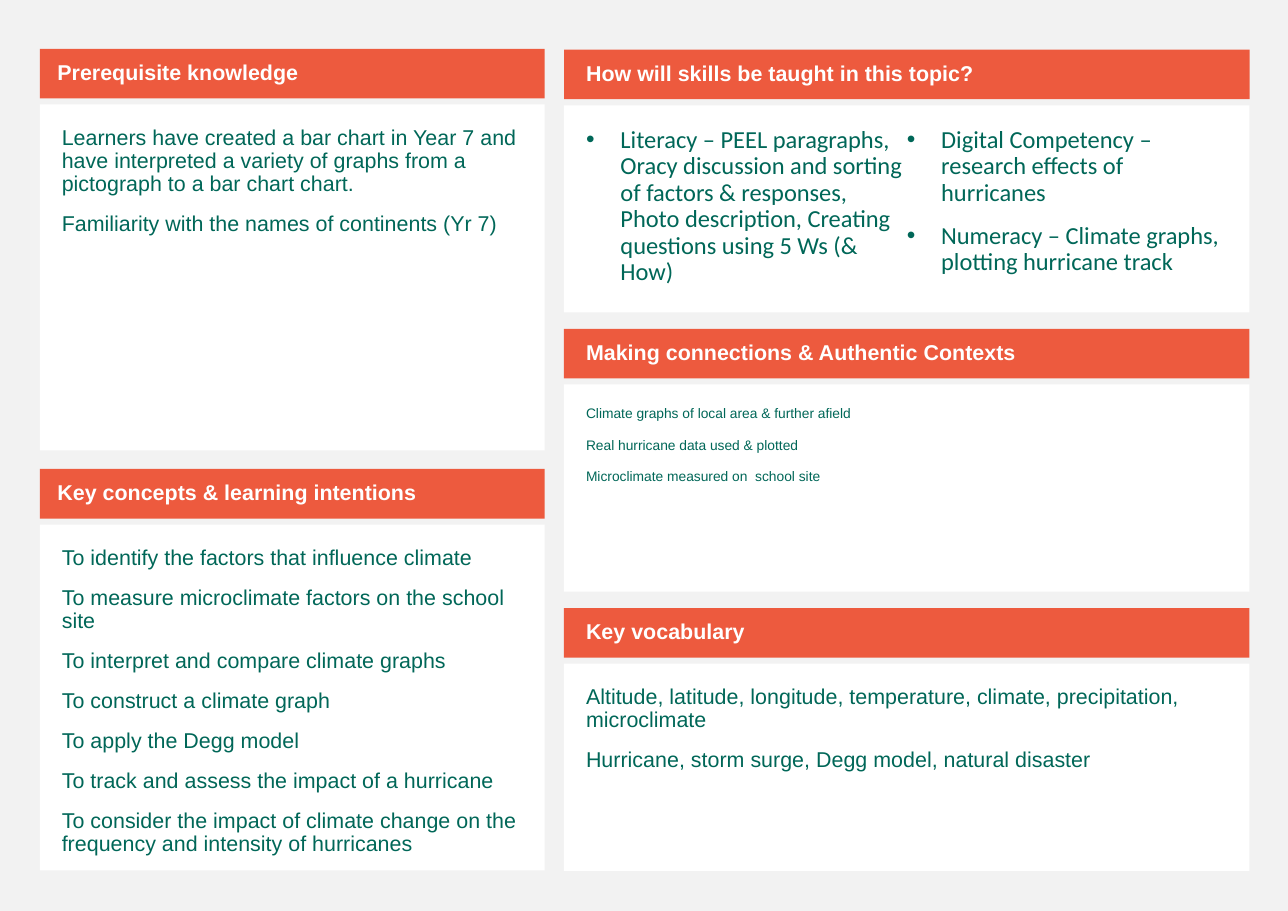
import pptx
import pptx.dml.color
import pptx.enum.shapes
import pptx.enum.text
import pptx.oxml
import pptx.oxml.ns
import pptx.util

Pt = pptx.util.Pt
ORANGE, GREEN, WHITE, GREY = "ED5A3E", "006758", "FFFFFF", "F2F2F2"
HEADING_H, BODY_OFFSET = 32.4, 36.4

# left, top of first panel, step between panels, width, body height, heading inset
LEFT_COLUMN = (26, 31.9, 274.6, 330, 226, 11.5)
RIGHT_COLUMN = (368.6, 32.4, 182.5, 448, 135.4, 14.4)

# heading, paragraphs, format of the paragraphs
LEFT_PANELS = [
    ("Prerequisite knowledge", [
        "Learners have created a bar chart in Year 7 and have interpreted a variety "
        "of graphs from a pictograph to a bar chart chart.",
        "Familiarity with the names of continents (Yr 7)",
    ], {}),
    ("Key concepts & learning intentions", [
        "To identify the factors that influence climate",
        "To measure microclimate factors on the school site",
        "To interpret and compare climate graphs",
        "To construct a climate graph",
        "To apply the Degg model",
        "To track and assess the impact of a hurricane",
        "To consider the impact of climate change on the frequency and intensity "
        "of hurricanes",
    ], {}),
]
RIGHT_PANELS = [
    ("How will skills be taught in this topic?", [
        "Literacy – PEEL paragraphs, Oracy discussion and sorting of factors & "
        "responses, Photo description, Creating questions using 5 Ws (& How)",
        "Digital Competency – research effects of hurricanes",
        "Numeracy – Climate graphs, plotting hurricane track",
    ], {"size": 16, "font": "Calibri", "bullet": "•", "columns": 2}),
    ("Making connections & Authentic Contexts", [
        "Climate graphs of local area & further afield",
        "Real hurricane data used & plotted",
        "Microclimate measured on  school site",
    ], {"size": 9}),
    ("Key vocabulary", [
        "Altitude, latitude, longitude, temperature, climate, precipitation, "
        "microclimate",
        "Hurricane, storm surge, Degg model, natural disaster",
    ], {}),
]


def rgb(color):
    return pptx.dml.color.RGBColor.from_string(color)


def set_bullet(p, bullet):
    """Give the paragraph a hanging bullet, or clear the inherited one."""
    pPr = p._p.get_or_add_pPr()
    indent = Pt(22.5) if bullet else 0
    pPr.set("marL", str(indent))
    pPr.set("indent", str(-indent))
    ns = pptx.oxml.ns.nsdecls("a")
    tags = [f'<a:buFont {ns} typeface="Arial"/>', f'<a:buChar {ns} char="{bullet}"/>']
    for tag in tags if bullet else [f"<a:buNone {ns}/>"]:
        pPr.append(pptx.oxml.parse_xml(tag))


def add_text(p, text, size=14, font="Arial", color=GREEN, bold=False, bullet=None):
    p.alignment = pptx.enum.text.PP_ALIGN.LEFT
    p.line_spacing = 0.9
    p.space_before, p.space_after = Pt(11), Pt(0)
    set_bullet(p, bullet)
    r = p.add_run()
    r.text = text
    r.font.size, r.font.name, r.font.bold = Pt(size), font, bold
    r.font.color.rgb = rgb(color)


def add_block(s, holders, box, fill, insets, anchor, texts, columns=1, **fmt):
    """Fill the next free placeholder, or a new rectangle when none is left."""
    sp = next(holders, None)
    if sp is None:
        sp = s.shapes.add_shape(pptx.enum.shapes.MSO_SHAPE.RECTANGLE, 0, 0, 0, 0)
    sp.left, sp.top, sp.width, sp.height = [Pt(v) for v in box]
    sp.fill.solid()
    sp.fill.fore_color.rgb = rgb(fill)
    sp.line.fill.background()
    sp.shadow.inherit = False
    tf = sp.text_frame
    tf.word_wrap = True
    tf.auto_size = pptx.enum.text.MSO_AUTO_SIZE.NONE
    tf.vertical_anchor = anchor
    tf.margin_left, tf.margin_top, tf.margin_right, tf.margin_bottom = [
        Pt(v) for v in insets]
    if columns > 1:
        tf._txBody.bodyPr.set("numCol", str(columns))
    for i, text in enumerate(texts):
        add_text(tf.add_paragraph() if i else tf.paragraphs[0], text, **fmt)


def add_column(s, holders, column, panels):
    left, first_top, step, width, body_h, inset = column
    anchors = pptx.enum.text.MSO_ANCHOR
    for i, (heading, texts, fmt) in enumerate(panels):
        top = first_top + i * step
        add_block(s, holders, (left, top, width, HEADING_H), ORANGE,
                  (inset, 3.6, 7.2, 3.6), anchors.MIDDLE, [heading],
                  color=WHITE, bold=True)
        add_block(s, holders, (left, top + BODY_OFFSET, width, body_h), WHITE,
                  (14.4,) * 4, anchors.TOP, texts, **fmt)


def main():
    prs = pptx.Presentation()
    prs.slide_width, prs.slide_height = Pt(841.7), Pt(595.4)
    s = prs.slides.add_slide(prs.slide_layouts.get_by_name("Comparison"))
    s.background.fill.solid()
    s.background.fill.fore_color.rgb = rgb(GREY)
    holders = iter(list(s.placeholders))
    add_column(s, holders, LEFT_COLUMN, LEFT_PANELS)
    add_column(s, holders, RIGHT_COLUMN, RIGHT_PANELS)
    prs.save("out.pptx")


if __name__ == "__main__":
    main()
